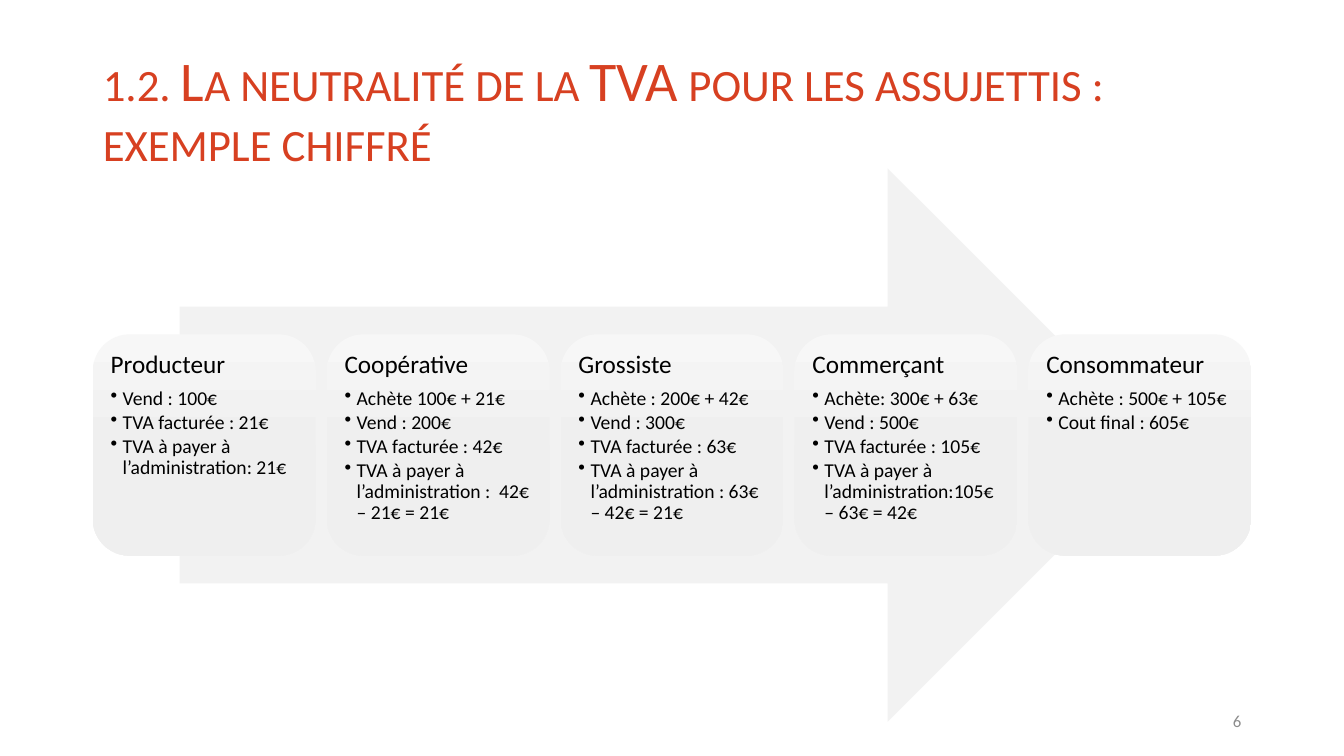
from copy import deepcopy
from dataclasses import dataclass

import pptx
import pptx.dml.color
import pptx.enum.shapes
import pptx.enum.text
import pptx.oxml
import pptx.oxml.ns
import pptx.util

MSO_SHAPE = pptx.enum.shapes.MSO_SHAPE
PP_ALIGN = pptx.enum.text.PP_ALIGN
MSO_ANCHOR = pptx.enum.text.MSO_ANCHOR


@dataclass(frozen=True)
class Theme:
    font: str = "Calibri"
    title: str = "D74021"
    text: str = "000000"
    page_number: str = "8C8C8C"
    arrow: str = "F2F2F2"
    card: tuple[tuple[float, str], ...] = ((0, "F7F7F7"), (0.5, "EFEFEF"), (1, "EDEDED"))
    title_size: int = 40
    heading_size: int = 18
    bullet_size: int = 14
    page_number_size: int = 12


@dataclass(frozen=True)
class Area:
    left: float
    top: float
    width: float
    height: float

    def lengths(self) -> tuple[int, ...]:
        return tuple(pptx.util.Inches(n) for n in (self.left, self.top, self.width, self.height))

    def inner(self, width_share: float, height_share: float) -> "Area":
        """Centred part of this area."""
        width, height = self.width * width_share, self.height * height_share
        return Area(self.left + (self.width - width) / 2,
                    self.top + (self.height - height) / 2, width, height)

    def column(self, index: int, count: int, gap: float) -> "Area":
        width = (self.width - gap * (count - 1)) / count
        return Area(self.left + index * (width + gap), self.top, width, self.height)


@dataclass(frozen=True)
class Actor:
    name: str
    operations: tuple[str, ...]


THEME = Theme()
SLIDE_WIDTH, SLIDE_HEIGHT = 13.33, 7.5
MARGIN = 0.92
CONTENT_WIDTH = SLIDE_WIDTH - 2 * MARGIN
TITLE_AREA = Area(MARGIN, 0.4, CONTENT_WIDTH, 1.45)
FLOW_AREA = Area(MARGIN, 1.67, CONTENT_WIDTH, 5.49)
NUMBER_AREA = Area(MARGIN + CONTENT_WIDTH - 3, 6.95, 3, 0.4)
CARD_GAP = 0.11
CARD_INSET = 0.07
BULLET_INDENT = 0.12

TITLE = "1.2. La neutralité de la TVA pour les assujettis : exemple chiffré"
ACTORS = (
    Actor("Producteur", ("Vend : 100€", "TVA facturée : 21€",
                         "TVA à payer à l’administration: 21€")),
    Actor("Coopérative", ("Achète 100€ + 21€", "Vend : 200€", "TVA facturée : 42€",
                          "TVA à payer à l’administration :  42€ – 21€ = 21€")),
    Actor("Grossiste", ("Achète : 200€ + 42€", "Vend : 300€", "TVA facturée : 63€",
                        "TVA à payer à l’administration : 63€ – 42€ = 21€")),
    Actor("Commerçant", ("Achète: 300€ + 63€", "Vend : 500€", "TVA facturée : 105€",
                         "TVA à payer à l’administration:105€ – 63€ = 42€")),
    Actor("Consommateur", ("Achète : 500€ + 105€", "Cout final : 605€")),
)


def rgb(value: str) -> pptx.dml.color.RGBColor:
    return pptx.dml.color.RGBColor.from_string(value)


def format_runs(para, size: int, color: str) -> None:
    for span in para.runs:
        span.font.name = THEME.font
        span.font.size = pptx.util.Pt(size)
        span.font.color.rgb = rgb(color)


def add_title(page) -> None:
    box = page.shapes.title
    box.left, box.top, box.width, box.height = TITLE_AREA.lengths()
    frame = box.text_frame
    frame.text = TITLE
    frame.word_wrap = True
    frame.auto_size = pptx.enum.text.MSO_AUTO_SIZE.NONE
    frame.vertical_anchor = MSO_ANCHOR.MIDDLE
    para = frame.paragraphs[0]
    para.alignment = PP_ALIGN.LEFT
    para.line_spacing = 0.9
    format_runs(para, THEME.title_size, THEME.title)
    for span in para.runs:
        span.font.bold = False
        span._r.get_or_add_rPr().set("cap", "small")


def add_plain_shape(page, kind: MSO_SHAPE, area: Area):
    """Shape without outline or shadow."""
    shape = page.shapes.add_shape(kind, *area.lengths())
    shape.shadow.inherit = False
    shape.line.fill.background()
    return shape


def fill_gradient(shape, stops: tuple[tuple[float, str], ...]) -> None:
    """Vertical gradient, first stop on top."""
    shape.fill.gradient()
    shape.fill.gradient_angle = 270
    stop_list = shape.element.spPr.find(".//" + pptx.oxml.ns.qn("a:gsLst"))
    while len(stop_list) < len(stops):
        stop_list.append(deepcopy(stop_list[-1]))
    for stop, (position, color) in zip(shape.fill.gradient_stops, stops):
        stop.position = position
        stop.color.rgb = rgb(color)


def set_bullet(para) -> None:
    properties = para._p.get_or_add_pPr()
    indent = pptx.util.Inches(BULLET_INDENT)
    properties.set("marL", str(indent))
    properties.set("indent", str(-indent))
    bullet = pptx.oxml.parse_xml(f'<a:buChar {pptx.oxml.ns.nsdecls("a")} char="•"/>')
    properties.append(bullet)


def add_card(page, actor: Actor, area: Area) -> None:
    card = add_plain_shape(page, MSO_SHAPE.ROUNDED_RECTANGLE, area)
    fill_gradient(card, THEME.card)
    frame = card.text_frame
    frame.word_wrap = True
    frame.vertical_anchor = MSO_ANCHOR.TOP
    inset = pptx.util.Inches(CARD_INSET)
    frame.margin_left = frame.margin_right = frame.margin_top = frame.margin_bottom = inset
    frame.text = "\n".join((actor.name, *actor.operations))
    for index, para in enumerate(frame.paragraphs):
        is_heading = index == 0
        size = THEME.heading_size if is_heading else THEME.bullet_size
        para.alignment = PP_ALIGN.LEFT
        para.line_spacing = 0.9
        para.space_after = pptx.util.Pt(size * (0.35 if is_heading else 0.15))
        if not is_heading:
            para.level = 1
            set_bullet(para)
        format_runs(para, size, THEME.text)


def add_flow(page) -> None:
    arrow = add_plain_shape(page, MSO_SHAPE.RIGHT_ARROW, FLOW_AREA.inner(0.85, 1))
    arrow.fill.solid()
    arrow.fill.fore_color.rgb = rgb(THEME.arrow)
    cards_area = FLOW_AREA.inner(1, 0.4)
    for index, actor in enumerate(ACTORS):
        add_card(page, actor, cards_area.column(index, len(ACTORS), CARD_GAP))


def add_page_number(page, number: int) -> None:
    frame = page.shapes.add_textbox(*NUMBER_AREA.lengths()).text_frame
    frame.text = str(number)
    frame.word_wrap = True
    frame.vertical_anchor = MSO_ANCHOR.MIDDLE
    frame.paragraphs[0].alignment = PP_ALIGN.RIGHT
    format_runs(frame.paragraphs[0], THEME.page_number_size, THEME.page_number)


def main() -> None:
    deck = pptx.Presentation()
    deck.slide_width = pptx.util.Inches(SLIDE_WIDTH)
    deck.slide_height = pptx.util.Inches(SLIDE_HEIGHT)
    page = deck.slides.add_slide(deck.slide_layouts.get_by_name("Title Only"))
    add_title(page)
    add_flow(page)
    add_page_number(page, 6)
    deck.save("out.pptx")


if __name__ == "__main__":
    main()
